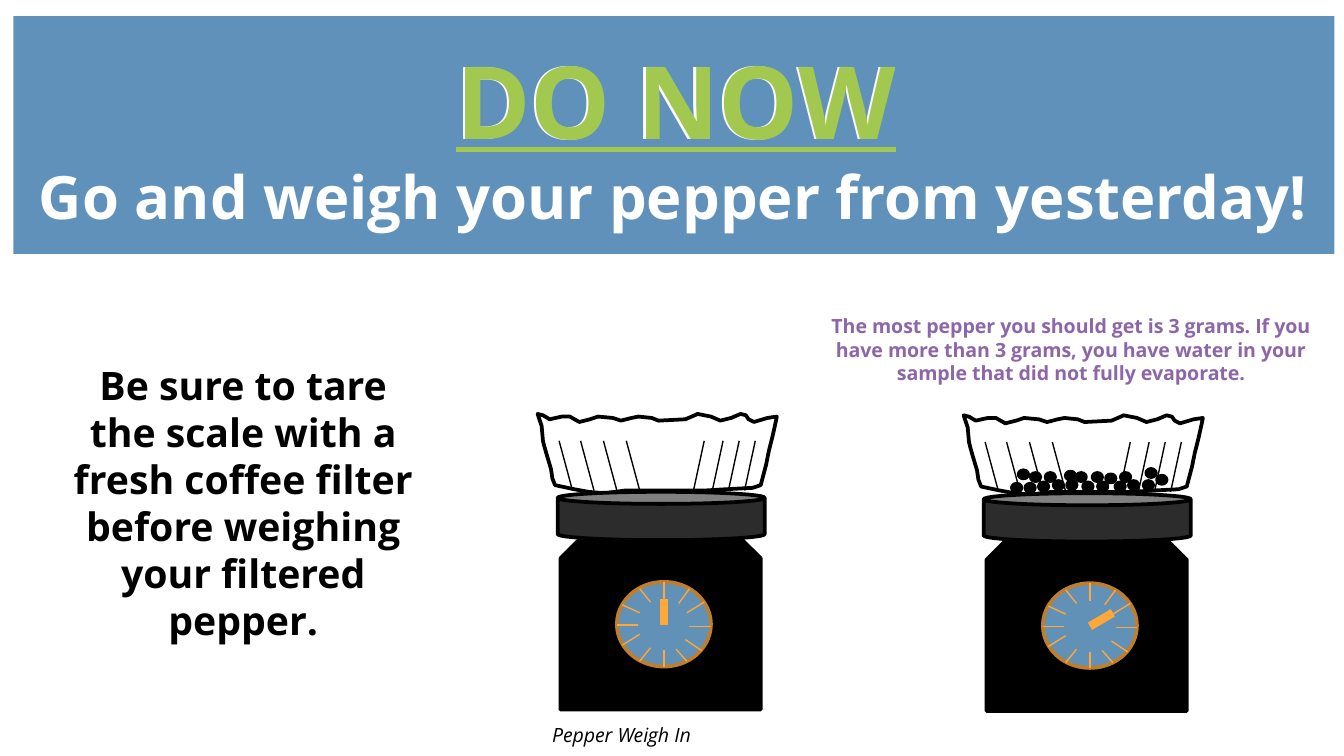
from lxml import etree
from pptx import Presentation
from pptx.dml.color import RGBColor
from pptx.enum.shapes import MSO_CONNECTOR, MSO_SHAPE
from pptx.enum.text import MSO_ANCHOR, PP_ALIGN
from pptx.oxml.ns import qn
from pptx.util import Pt

PX = 9144
RECT, OVAL, CAN = MSO_SHAPE.RECTANGLE, MSO_SHAPE.OVAL, MSO_SHAPE.CAN
SNIP = MSO_SHAPE.SNIP_2_SAME_RECTANGLE
STRAIGHT = MSO_CONNECTOR.STRAIGHT
MIDDLE = MSO_ANCHOR.MIDDLE
LEFT, CENTER = PP_ALIGN.LEFT, PP_ALIGN.CENTER
FONT = "Open Sans"
BLACK, WHITE, ORANGE = "000000", "FFFFFF", "FEA83A"

FILTER_OUTLINE = [
    (13, 53), (11, 48), (10, 41), (7, 31), (5, 24), (4, 20), (3, 9), (0, 0),
    (4, 1), (9, 4), (18, 2), (24, 2), (31, 6), (39, 4), (45, 2), (56, 3),
    (62, 5), (70, 3), (75, 2), (85, 3), (90, 5), (110, 4), (117, 1), (119, 0),
    (129, 2), (136, 5), (144, 3), (151, 0), (155, 1), (157, 4), (161, 6),
    (171, 3), (178, 2), (177, 7), (175, 16), (172, 28), (170, 38), (166, 53),
    (160, 55), (141, 56), (124, 57), (65, 57), (50, 59), (38, 58), (27, 56),
]
PLEATS = [(x, 10) for x in (16, 32, 49, 66)] + [(x, -8) for x in (124, 138, 150, 162)]
PEPPER = [
    (89, 50), (100, 50), (113, 50), (77, 49), (67, 49), (56, 50), (123, 49),
    (117, 43), (106, 44), (46, 51), (50, 43), (61, 43), (84, 43), (96, 43),
    (36, 51), (76, 42), (41, 41), (134, 49), (144, 45), (136, 40),
]
TICKS = [
    (35, 0, 35, 13), (54, 5, 46, 16), (65, 15, 52, 23), (70, 33, 54, 33),
    (63, 51, 51, 43), (52, 59, 44, 50), (35, 63, 35, 51), (17, 5, 25, 15),
    (4, 17, 17, 23), (16, 32, 0, 32), (17, 39, 4, 47), (25, 49, 17, 59),
]


def px(n):
    """Turn px into EMU."""
    return int(n * PX)


def rgb(color):
    """Turn a hex string into a colour."""
    return RGBColor.from_string(color)


def paint(sp, fill, line=None):
    """Give a shape its fill and outline, without a shadow."""
    sp.shadow.inherit = False
    sp.fill.solid()
    sp.fill.fore_color.rgb = rgb(fill)
    if line:
        sp.line.color.rgb = rgb(line)
        sp.line.width = Pt(2)
    else:
        sp.line.fill.background()
    return sp


def add_shape(shapes, kind, x, y, w, h, fill, line=None):
    """Add a painted preset shape."""
    return paint(shapes.add_shape(kind, px(x), px(y), px(w), px(h)), fill, line)


def add_line(shapes, x1, y1, x2, y2, color, width=0.75):
    """Add a straight line."""
    cn = shapes.add_connector(STRAIGHT, px(x1), px(y1), px(x2), px(y2))
    cn.line.color.rgb = rgb(color)
    cn.line.width = Pt(width)
    etree.SubElement(cn._element.spPr, qn("a:effectLst"))


def add_run(p, text, size, color, bold=False, italic=False, underline=False):
    """Add a formatted run to a paragraph."""
    r = p.add_run()
    r.text = text
    f = r.font
    f.name, f.size, f.color.rgb = FONT, Pt(size), rgb(color)
    f.bold, f.italic, f.underline = bold, italic, underline


def set_text(sp, *lines, align=CENTER, inset=10, **fmt):
    """Write (text, size) lines into a shape as one paragraph."""
    tf = sp.text_frame
    tf.word_wrap = True
    tf.vertical_anchor = MIDDLE
    tf.margin_top = tf.margin_bottom = px(inset)
    tf.margin_left = tf.margin_right = px(10)
    p = tf.paragraphs[0]
    p.alignment = align
    for i, (text, size) in enumerate(lines):
        if i:
            p.add_line_break()
        add_run(p, text, size, **fmt)


def banner(shapes, x, y, w, h):
    """Draw the heading band with its green title over a white one."""
    sp = add_shape(shapes, RECT, x, y, w, h, "6091BA")
    set_text(sp, ("DO NOW", 54), ("Go and weigh your pepper from yesterday!", 32),
             color=WHITE, bold=True)
    title = shapes.add_textbox(px(x + 268), px(y), px(450), px(124))
    set_text(title, ("DO NOW", 54), inset=5, color="A2C850", bold=True, underline=True)


def coffee_filter(shapes, x, y, pepper=()):
    """Draw a pleated filter and the pepper grains in it."""
    fb = shapes.build_freeform(*FILTER_OUTLINE[0], scale=PX)
    fb.add_line_segments(FILTER_OUTLINE[1:], close=True)
    paint(fb.convert_to_shape(px(x), px(y)), WHITE, BLACK)
    for left, lean in PLEATS:
        add_line(shapes, x + left, y + 20, x + left + lean, y + 57, BLACK)
    for left, top in pepper:
        add_shape(shapes, OVAL, x + left, y + top, 7, 6, BLACK, BLACK)


def scale(shapes, x, y, needle):
    """Draw a scale with its dial and needle."""
    add_shape(shapes, SNIP, x + 2, y + 27, 149, 135, BLACK, BLACK)
    add_shape(shapes, CAN, x, y, 154, 36, "2C2C2C", BLACK)
    dx, dy = x + 44, y + 67
    add_shape(shapes, OVAL, dx, dy, 70, 63, "6291B8", "BD7F2F")
    for x1, y1, x2, y2 in TICKS:
        add_line(shapes, dx + x1, dy + y1, dx + x2, dy + y2, ORANGE)
    add_line(shapes, dx + 35, dy + 32, dx + needle[0], dy + needle[1], ORANGE, 4.5)


def weighing(shapes, x, y, needle, pepper=()):
    """Draw a filter on a scale as one group."""
    group = shapes.add_group_shape().shapes
    coffee_filter(group, x, y, pepper)
    scale(group, x + 15, y + 58, needle)


def note(shapes, x, y, w, h, text, size, line=None, **fmt):
    """Draw a white box of text."""
    set_text(add_shape(shapes, RECT, x, y, w, h, WHITE, line), (text, size), **fmt)


def main():
    """Build the slide and save it."""
    prs = Presentation()
    prs.slide_width = px(1000)
    prs.slide_height = prs.slide_width * 9 // 16
    s = prs.slides.add_slide(prs.slide_layouts[6])
    shapes = s.shapes
    banner(shapes, 10, 12, 983, 177)
    note(shapes, 44, 197, 274, 354,
         "Be sure to tare the scale with a fresh coffee filter before weighing "
         "your filtered pepper.", 21, color=BLACK, bold=True)
    weighing(shapes, 400, 308, (35, 13))
    weighing(shapes, 717, 309, (52, 22), PEPPER)
    note(shapes, 603, 221, 388, 78,
         "The most pepper you should get is 3 grams. If you have more than 3 grams, "
         "you have water in your sample that did not fully evaporate.", 10.5,
         color="8C66A8", bold=True)
    note(shapes, 401, 532, 266, 29, "Pepper Weigh In", 10.5, line=WHITE,
         align=LEFT, inset=5, color=BLACK, italic=True)
    prs.save("out.pptx")


if __name__ == "__main__":
    main()
